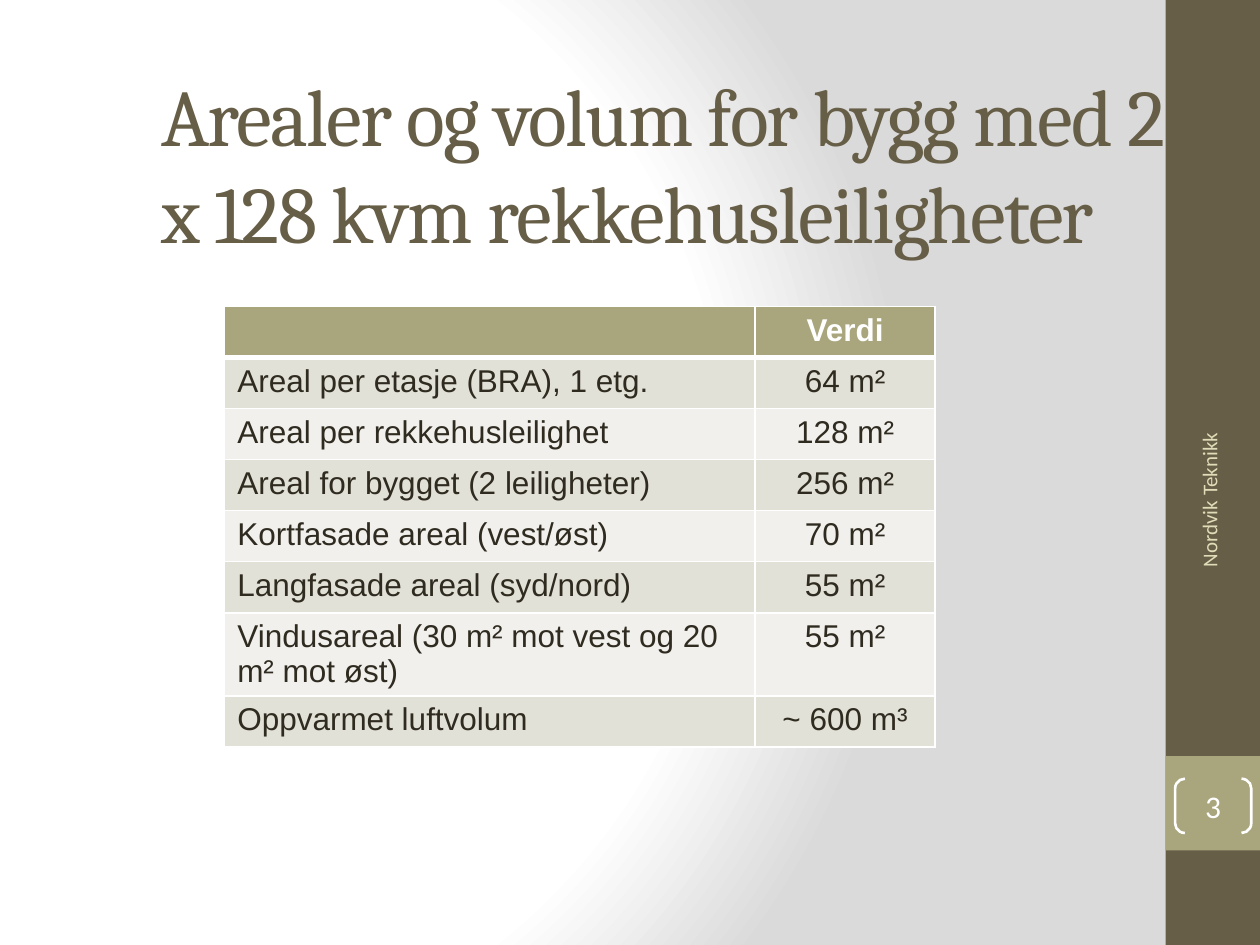
"""Build a slide with areas and volume of a terraced house building."""
from pptx import Presentation
from pptx.dml.color import RGBColor
from pptx.enum.shapes import MSO_SHAPE
from pptx.enum.text import MSO_ANCHOR, MSO_AUTO_SIZE, PP_ALIGN
from pptx.oxml import parse_xml
from pptx.oxml.ns import nsdecls
from pptx.util import Pt

THEME = {
    "colors": {
        "brown": "675E47", "olive": "A9A57C", "sand": "DFDCB7", "ink": "2F2B20",
        "white": "FFFFFF", "grey": "DADADA", "band": "E2E1D7", "pale": "F1F0EC",
    },
    "title": {"name": "Cambria", "size": Pt(46)},
    "table": {"name": "Arial", "size": Pt(18)},
    "footer": {"name": "Calibri", "size": Pt(12)},
    "number": {"name": "Calibri", "size": Pt(18)},
}
COLORS = THEME["colors"]


def write(tf, text, style, color, align, bold=False):
    p = tf.paragraphs[0]
    p.alignment = align
    r = p.add_run()
    r.text = text
    for key, value in {**THEME[style], "bold": bold}.items():
        setattr(r.font, key, value)
    r.font.color.rgb = RGBColor.from_string(COLORS[color])
    return r


def paint(fill, color):
    fill.solid()
    fill.fore_color.rgb = RGBColor.from_string(COLORS[color])


prs = Presentation()
prs.slide_width, prs.slide_height = Pt(720), Pt(540)
s = prs.slides.add_slide(prs.slide_layouts[5])

s.background.fill.gradient()
grad = s.element.xpath(".//p:bgPr/a:gradFill")[0]
stops = "".join(
    f'<a:gs pos="{pos * 1000}"><a:srgbClr val="{COLORS[color]}"/></a:gs>'
    for pos, color in ((0, "white"), (75, "white"), (100, "grey"))
)
grad.getparent().replace(grad, parse_xml(
    f'<a:gradFill {nsdecls("a")} rotWithShape="1"><a:gsLst>{stops}</a:gsLst>'
    '<a:path path="circle"><a:fillToRect l="20000" t="50000" r="100000" b="50000"/>'
    "</a:path></a:gradFill>"
))

for top, height, color in ((0, 540, "brown"), (432, 54, "olive")):
    sp = s.shapes.add_shape(MSO_SHAPE.RECTANGLE, Pt(666), Pt(top), Pt(54), Pt(height))
    sp.shadow.inherit = False
    sp.line.fill.background()
    paint(sp.fill, color)

title = s.shapes.title
for key, value in {"left": 85, "top": 54.7, "width": 607.7, "height": 77}.items():
    setattr(title, key, Pt(value))
tf = title.text_frame
for key, value in {"word_wrap": True, "auto_size": MSO_AUTO_SIZE.NONE,
                   "vertical_anchor": MSO_ANCHOR.MIDDLE}.items():
    setattr(tf, key, value)
r = write(tf, "Arealer og volum for bygg med 2 x 128 kvm rekkehusleiligheter",
          "title", "brown", PP_ALIGN.LEFT)
r.font._element.set("spc", "-100")

ROWS = [
    ("", "Verdi"),
    ("Areal per etasje (BRA), 1 etg.", "64 m²"),
    ("Areal per rekkehusleilighet", "128 m²"),
    ("Areal for bygget (2 leiligheter)", "256 m²"),
    ("Kortfasade areal (vest/øst)", "70 m²"),
    ("Langfasade areal (syd/nord)", "55 m²"),
    ("Vindusareal (30 m² mot vest og 20 m² mot øst)", "55 m²"),
    ("Oppvarmet luftvolum", "~ 600 m³"),
]
ROW_HEIGHT = 29.2
table = s.shapes.add_table(len(ROWS), 2, Pt(128.4), Pt(175), Pt(406),
                           Pt(ROW_HEIGHT * len(ROWS))).table
for col, width in zip(table.columns, (303, 103)):
    col.width = Pt(width)
for i, row in enumerate(ROWS):
    table.rows[i].height = Pt(ROW_HEIGHT)
    fill = "olive" if i == 0 else ("pale", "band")[i % 2]
    edges = {"L": 1, "R": 1, "T": 3 if i == 1 else 1, "B": 3 if i == 0 else 1}
    for j, text in enumerate(row):
        cell = table.cell(i, j)
        paint(cell.fill, fill)
        if text:
            write(cell.text_frame, text, "table", "ink" if i else "white",
                  PP_ALIGN.CENTER if j else PP_ALIGN.LEFT, bold=i == 0)
        for k, (side, width) in enumerate(edges.items()):
            cell._tc.tcPr.insert(k, parse_xml(
                f'<a:ln{side} {nsdecls("a")} w="{Pt(width)}"><a:solidFill>'
                f'<a:srgbClr val="{COLORS["white"]}"/></a:solidFill></a:ln{side}>'
            ))

footer = s.shapes.add_textbox(Pt(597.6), Pt(319), Pt(186.5), Pt(28.8))
footer.rotation = 270
footer.text_frame.word_wrap = True
footer.text_frame.vertical_anchor = MSO_ANCHOR.MIDDLE
write(footer.text_frame, "Nordvik Teknikk", "footer", "sand", PP_ALIGN.RIGHT)

number = s.shapes.add_shape(MSO_SHAPE.DOUBLE_BRACKET, Pt(671.5), Pt(445), Pt(43.5), Pt(31))
number.adjustments[0] = 0.18
number.shadow.inherit = False
number.fill.background()
number.line.width = Pt(1.5)
paint(number.line.fill, "white")
tf = number.text_frame
for side in ("left", "right", "top", "bottom"):
    setattr(tf, f"margin_{side}", 0)
tf.vertical_anchor = MSO_ANCHOR.MIDDLE
write(tf, "3", "number", "white", PP_ALIGN.CENTER)

prs.save("out.pptx")
